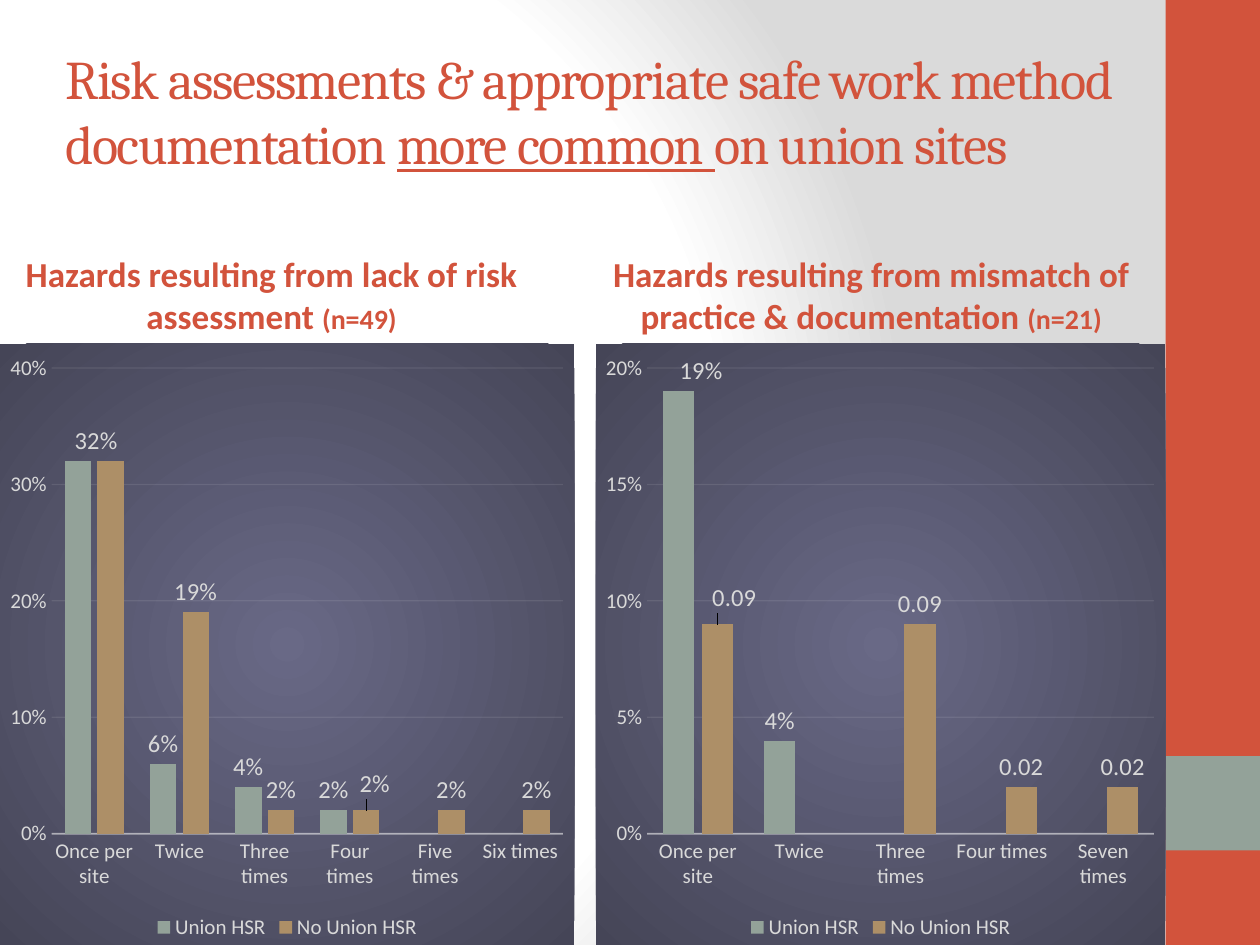
from dataclasses import dataclass

from lxml.etree import SubElement
from pptx import Presentation
from pptx.chart.data import CategoryChartData
from pptx.dml.color import RGBColor
from pptx.enum.chart import XL_CHART_TYPE, XL_LABEL_POSITION, XL_LEGEND_POSITION, XL_TICK_MARK
from pptx.enum.shapes import MSO_SHAPE
from pptx.enum.text import MSO_ANCHOR, PP_ALIGN
from pptx.oxml import parse_xml
from pptx.oxml.ns import nsdecls, qn
from pptx.util import Inches, Pt


@dataclass(frozen=True)
class Theme:
    accent: str = "D2533C"
    sage: str = "93A299"
    tan: str = "AD8F67"
    chart_text: str = "D9D9D9"
    chart_line: str = "F2F2F2"
    page_stops: tuple = ((0, "FFFFFF"), (75, "FFFFFF"), (100, "DADADA"))
    chart_stops: tuple = ((0, "696986"), (100, "454557"))
    title_font: str = "Cambria"
    body_font: str = "Calibri"
    title_size: float = 31.1
    heading_size: float = 20
    count_size: float = 16
    axis_size: float = 12
    label_size: float = 14


THEME = Theme()


@dataclass
class Bars:
    """One series; labelled lists the labelled points, nudges shifts some labels."""
    name: str
    values: tuple
    labelled: tuple
    nudges: dict
    number_format: str = "0%"


def radial_fill(stops, focus):
    """Circular gradient; focus gives left, top, right and bottom in percent."""
    marks = "".join(f'<a:gs pos="{at * 1000}"><a:srgbClr val="{color}"/></a:gs>'
                    for at, color in stops)
    left, top, right, bottom = (side * 1000 for side in focus)
    return parse_xml(
        f'<a:gradFill {nsdecls("a")} rotWithShape="1"><a:gsLst>{marks}</a:gsLst>'
        f'<a:path path="circle"><a:fillToRect l="{left}" t="{top}" r="{right}" b="{bottom}"/>'
        '</a:path></a:gradFill>')


def set_background(page):
    page.background.fill.solid()
    solid = page.element.find(".//" + qn("p:bgPr")).find(qn("a:solidFill"))
    solid.getparent().replace(solid, radial_fill(THEME.page_stops, (20, 50, 100, 50)))


def add_band(page, top, height, color):
    band = page.shapes.add_shape(MSO_SHAPE.RECTANGLE, Inches(9.25), Inches(top),
                                 Inches(0.75), Inches(height))
    band.shadow.inherit = False
    band.fill.solid()
    band.fill.fore_color.rgb = RGBColor.from_string(color)
    band.line.fill.background()


def style_font(font, name, size, color):
    font.name = name
    font.size = Pt(size)
    font.color.rgb = RGBColor.from_string(color)


def add_text(page, place, anchor, pieces, font_name):
    """Add one paragraph; pieces are (text, size) pairs. Returns the paragraph."""
    box = page.shapes.add_textbox(*map(Inches, place))
    frame = box.text_frame
    frame.word_wrap = True
    frame.vertical_anchor = anchor
    para = frame.paragraphs[0]
    for text, size in pieces:
        span = para.add_run()
        span.text = text
        style_font(span.font, font_name, size, THEME.accent)
    return para


def add_title(page):
    texts = ("Risk assessments & appropriate safe work method documentation ",
             "more common ", "on union sites")
    para = add_text(page, (0.42, 0.26, 8.83, 1.23), MSO_ANCHOR.MIDDLE,
                    [(text, THEME.title_size) for text in texts], THEME.title_font)
    for span in para.runs:
        span.font._element.set("spc", "-80")
    para.runs[1].font.underline = True


def add_heading(page, place, text, count):
    para = add_text(page, place, MSO_ANCHOR.BOTTOM,
                    [(text, THEME.heading_size), (count, THEME.count_size)], THEME.body_font)
    para.alignment = PP_ALIGN.CENTER
    for span in para.runs:
        span.font.bold = True


def manual_layout(inner=False, **sizes):
    """Chart layout; sizes x, y, w and h are shares of the chart."""
    target = '<c:layoutTarget val="inner"/><c:xMode val="edge"/><c:yMode val="edge"/>'
    values = "".join(f'<c:{key} val="{value}"/>' for key, value in sizes.items())
    return parse_xml(f'<c:layout {nsdecls("c")}><c:manualLayout>{target if inner else ""}'
                     f'{values}</c:manualLayout></c:layout>')


def style_line(line, width, opacity):
    line.width = Pt(width)
    line.color.rgb = RGBColor.from_string(THEME.chart_line)
    color = line._get_or_add_ln().find(".//" + qn("a:srgbClr"))
    SubElement(color, qn("a:alpha")).set("val", str(opacity * 1000))


def style_axes(chart, step):
    for axis in (chart.category_axis, chart.value_axis):
        axis.major_tick_mark = axis.minor_tick_mark = XL_TICK_MARK.NONE
        style_font(axis.tick_labels.font, THEME.body_font, THEME.axis_size, THEME.chart_text)
    style_line(chart.category_axis.format.line, 1, 54)
    values = chart.value_axis
    values.format.line.fill.background()
    values.minimum_scale = 0
    values.major_unit = step
    values.tick_labels.number_format = "0%"
    values.tick_labels.number_format_is_linked = False
    style_line(values.major_gridlines.format.line, 0.75, 10)


def style_labels(series, bars):
    all_labels = series.data_labels
    all_labels.show_value = len(bars.labelled) == len(bars.values)
    all_labels.number_format = bars.number_format
    all_labels.number_format_is_linked = False
    all_labels.position = XL_LABEL_POSITION.OUTSIDE_END
    style_font(all_labels.font, THEME.body_font, THEME.label_size, THEME.chart_text)
    points = bars.nudges if all_labels.show_value else bars.labelled
    for index in points:
        label = series.points[index].data_label
        style_font(label.font, THEME.body_font, THEME.label_size, THEME.chart_text)
        label.position = XL_LABEL_POSITION.OUTSIDE_END
    for label in series._element.iter(qn("c:dLbl")):
        mark = label.find(qn("c:idx"))
        index = int(mark.get("val"))
        if index in bars.nudges:
            x, y = bars.nudges[index]
            mark.addnext(manual_layout(x=x, y=y))


def add_bar_chart(page, left, width, categories, groups, step):
    data = CategoryChartData()
    data.categories = categories
    for bars in groups:
        data.add_series(bars.name, bars.values, bars.number_format)
    chart = page.shapes.add_chart(XL_CHART_TYPE.COLUMN_CLUSTERED, Inches(left), Inches(2.73),
                                  Inches(width), Inches(4.77), data).chart
    chart.has_title = False
    style_font(chart.font, THEME.body_font, THEME.axis_size, THEME.chart_text)
    chart.has_legend = True
    chart.legend.position = XL_LEGEND_POSITION.BOTTOM
    chart.legend.include_in_layout = False
    style_font(chart.legend.font, THEME.body_font, THEME.axis_size, THEME.chart_text)
    style_axes(chart, step)
    plot = chart.plots[0]
    plot.vary_by_categories = False
    plot.gap_width = 100
    plot.overlap = -24
    for series, bars, color in zip(plot.series, groups, (THEME.sage, THEME.tan)):
        series.format.fill.solid()
        series.format.fill.fore_color.rgb = RGBColor.from_string(color)
        style_labels(series, bars)
    area = chart.element.find(".//" + qn("c:plotArea"))
    for layout in area.findall(qn("c:layout")):
        area.remove(layout)
    area.insert(0, manual_layout(inner=True, x=0.09, y=0.04, w=0.89, h=0.775))
    frame = parse_xml(f'<c:spPr {nsdecls("c", "a")}><a:ln><a:noFill/></a:ln></c:spPr>')
    frame.insert(0, radial_fill(THEME.chart_stops, (50, 50, 50, 50)))
    chart.element.find(qn("c:chart")).addnext(frame)


def main():
    deck = Presentation()
    deck.slide_width, deck.slide_height = Inches(10), Inches(7.5)
    page = deck.slides.add_slide(deck.slide_layouts[6])
    set_background(page)
    add_band(page, 0, 7.5, THEME.accent)
    add_band(page, 6, 0.75, THEME.sage)
    add_title(page)
    add_heading(page, (0, 1.86, 4.31, 0.86), "Hazards resulting from lack of risk assessment ", "(n=49)")
    add_bar_chart(
        page, 0, 4.56,
        ("Once per site", "Twice", "Three times", "Four times", "Five times", "Six times"),
        (Bars("Union HSR", (0.32, 0.06, 0.04, 0.02, None, None), (1, 2, 3), {}),
         Bars("No Union HSR", (0.32, 0.19, 0.02, 0.02, 0.02, 0.02), range(6),
              {0: (-0.025, 0), 3: (0.015, -0.01)})), 0.1)
    add_heading(page, (4.58, 1.88, 4.67, 0.84),
                "Hazards resulting from mismatch of practice & documentation ", "(n=21)")
    add_bar_chart(
        page, 4.73, 4.52,
        ("Once per site", "Twice", "Three times", "Four times", "Seven times"),
        (Bars("Union HSR", (0.19, 0.04, None, None, None), range(5), {0: (0.04, 0)}),
         Bars("No Union HSR", (0.09, None, 0.09, 0.02, 0.02), range(5),
              {0: (0.03, -0.01)}, "General")), 0.05)
    deck.save("out.pptx")


if __name__ == "__main__":
    main()
